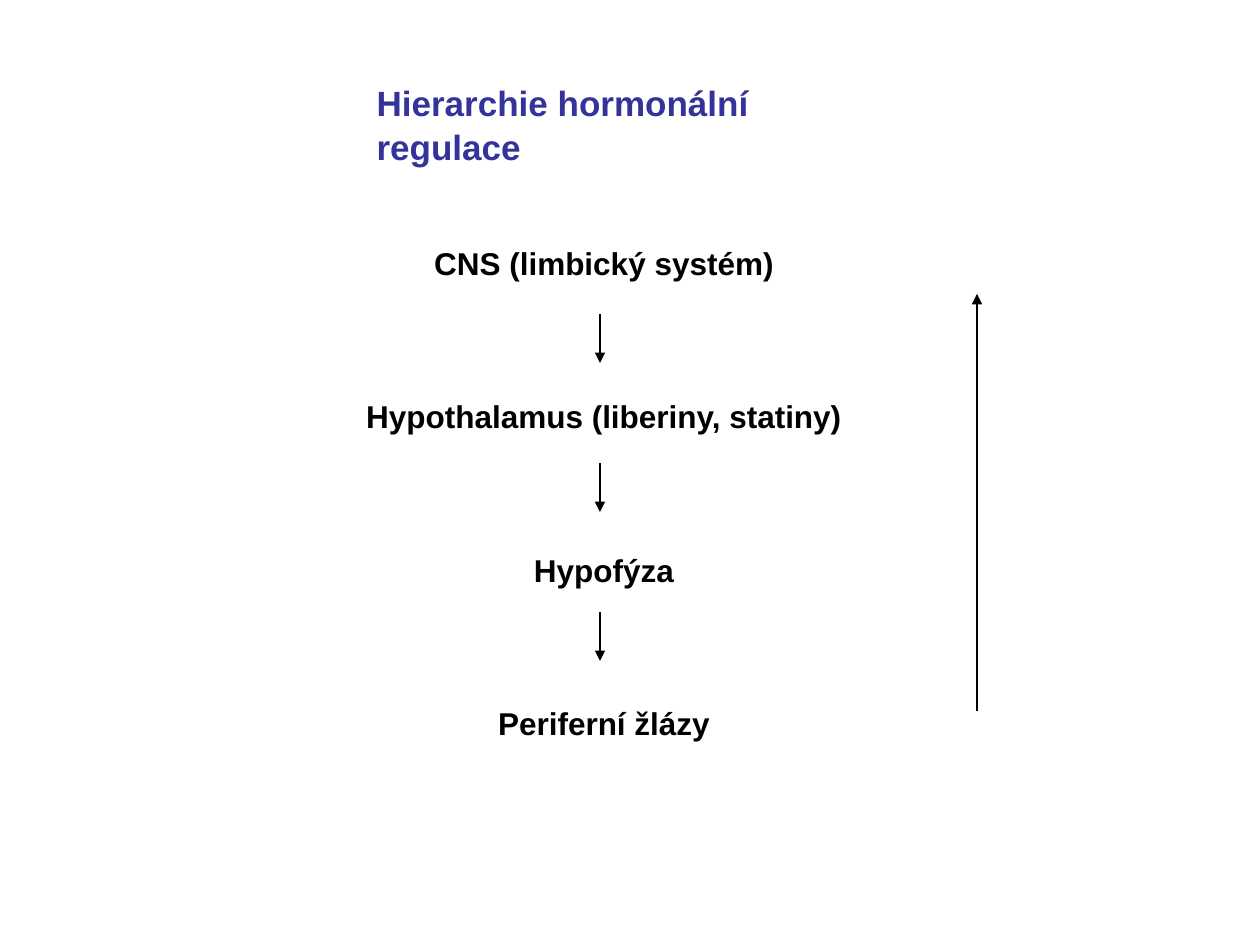
from pptx import Presentation
from pptx.dml.color import RGBColor
from pptx.enum.shapes import MSO_CONNECTOR as CONN
from pptx.enum.text import MSO_ANCHOR as ANCHOR, PP_ALIGN as ALIGN
from pptx.oxml.ns import qn
from pptx.util import Pt
from lxml import etree

PX = 914400 / 126
COLORS = {"title": "333399", "ink": "000000"}


def px(*values):
    return [round(v * PX) for v in values]


def style(p, size, color, align):
    p.alignment = align
    p.font.name = "Arial"
    p.font.size = Pt(size)
    p.font.bold = True
    p.font.color.rgb = RGBColor.from_string(COLORS[color])


prs = Presentation()
prs.slide_width, prs.slide_height = px(1260, 945)
s = prs.slides.add_slide(prs.slide_layouts[5])

# Title
title = s.shapes.title
title.left, title.top, title.width, title.height = px(364, 73, 530, 96)
tf = title.text_frame
tf.word_wrap = True
tf.vertical_anchor = ANCHOR.TOP
tf.text = "Hierarchie hormonální regulace"
p = tf.paragraphs[0]
style(p, 20, "title", ALIGN.LEFT)
p.line_spacing = 1.05

# Levels of the hierarchy
levels = ["CNS (limbický systém)", "Hypothalamus (liberiny, statiny)",
          "Hypofýza", "Periferní žlázy"]
tf = s.shapes.add_textbox(*px(353, 238, 502, 505)).text_frame
tf.word_wrap = False
for i, level in enumerate(levels):
    p = tf.paragraphs[0] if i == 0 else tf.add_paragraph()
    p.text = level
    style(p, 18, "ink", ALIGN.CENTER)
    if i:
        p.space_before = Pt(66)

# Arrows down between levels, and the feedback arrow up
arrows = [(600, 314 + 149 * i, 600, 363 + 149 * i) for i in range(3)]
arrows.append((977, 711, 977, 294))
for arrow in arrows:
    c = s.shapes.add_connector(CONN.STRAIGHT, *px(*arrow))
    c.line.width = Pt(0.75)
    c.line.color.rgb = RGBColor.from_string(COLORS["ink"])
    etree.SubElement(c.line._get_or_add_ln(), qn("a:tailEnd"), type="triangle")
    etree.SubElement(c._element.spPr, qn("a:effectLst"))

prs.save("out.pptx")
